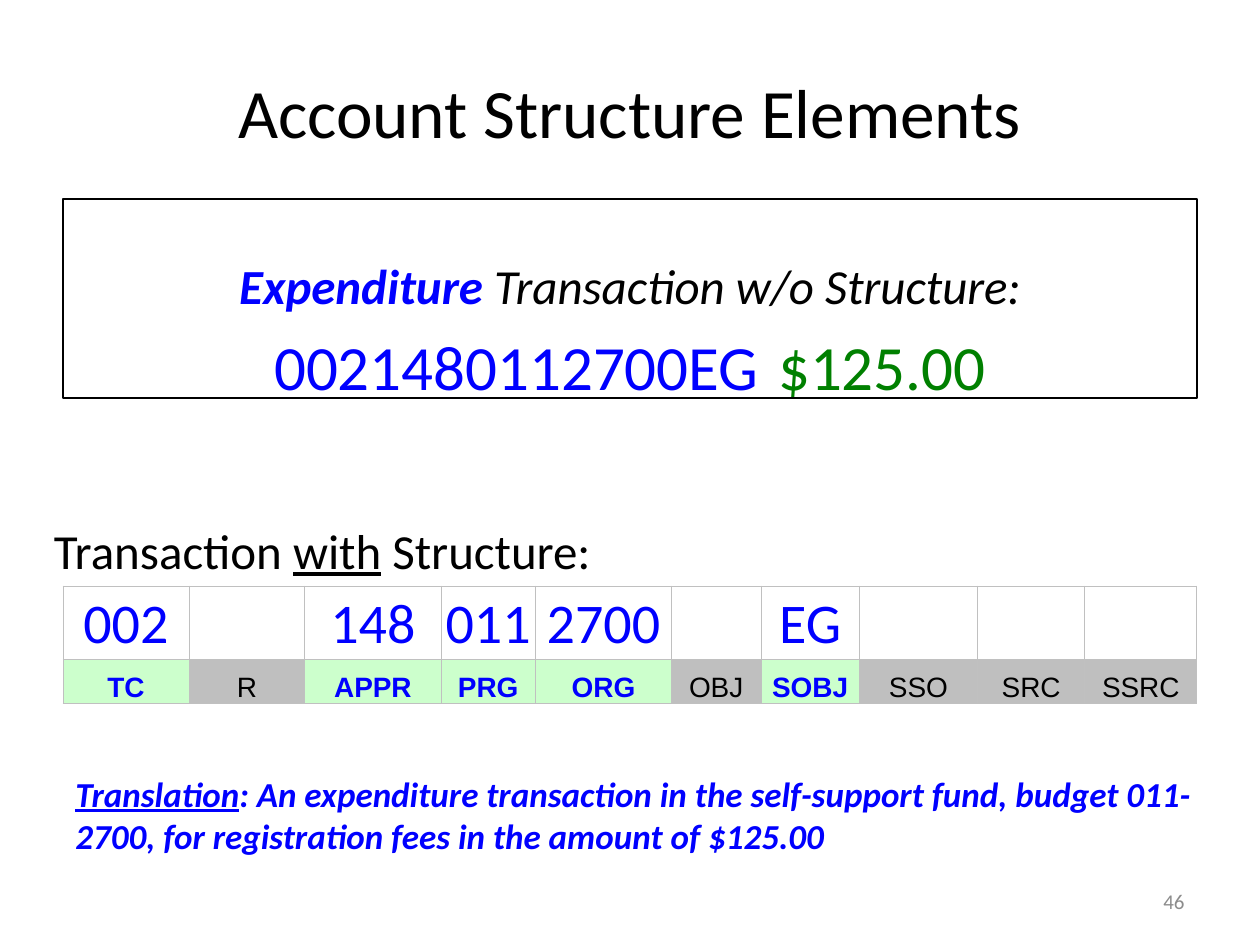
from dataclasses import dataclass

from lxml import etree
from pptx import Presentation
from pptx.dml.color import RGBColor
from pptx.enum.shapes import MSO_SHAPE
from pptx.enum.text import MSO_ANCHOR, PP_ALIGN
from pptx.oxml.ns import qn
from pptx.util import Inches, Pt

RECTANGLE = MSO_SHAPE.RECTANGLE
TOP, MIDDLE, BOTTOM = MSO_ANCHOR.TOP, MSO_ANCHOR.MIDDLE, MSO_ANCHOR.BOTTOM
LEFT, CENTER, RIGHT = PP_ALIGN.LEFT, PP_ALIGN.CENTER, PP_ALIGN.RIGHT


@dataclass(frozen=True)
class Theme:
    font: str = "Calibri"
    label_font: str = "Arial"
    black: str = "000000"
    blue: str = "0000FF"
    green: str = "008000"
    used: str = "CCFFCC"
    unused: str = "BFBFBF"
    border: str = "C0C0C0"
    muted: str = "8C8C8C"
    title: float = 39.6
    account: int = 36
    code: int = 32
    heading: int = 28
    note: int = 20
    label: int = 16
    number: int = 12


THEME = Theme()

ELEMENTS = [
    ("TC", "002", 1),
    ("R", "", 0.92),
    ("APPR", "148", 1.08),
    ("PRG", "011", 0.75),
    ("ORG", "2700", 1.08),
    ("OBJ", "", 0.71),
    ("SOBJ", "EG", 0.78),
    ("SSO", "", 0.94),
    ("SRC", "", 0.85),
    ("SSRC", "", 0.89),
]
ROW_HEIGHTS = (0.58, 0.35)


def add_text(paragraph, text, size, color=THEME.black, font=THEME.font,
             bold=False, italic=False, underline=False):
    run = paragraph.add_run()
    run.text = text
    run.font.size = Pt(size)
    run.font.name = font
    run.font.color.rgb = RGBColor.from_string(color)
    run.font.bold = bold
    run.font.italic = italic
    run.font.underline = underline


def add_text_box(slide, box, align=LEFT, anchor=TOP):
    shape = slide.shapes.add_textbox(*map(Inches, box))
    shape.text_frame.word_wrap = True
    shape.text_frame.vertical_anchor = anchor
    paragraph = shape.text_frame.paragraphs[0]
    paragraph.alignment = align
    return paragraph


def add_title(slide, box):
    paragraph = add_text_box(slide, box, CENTER, MIDDLE)
    add_text(paragraph, "Account Structure Elements", THEME.title)


def add_unstructured_panel(slide, box):
    shape = slide.shapes.add_shape(RECTANGLE, *map(Inches, box))
    shape.shadow.inherit = False
    shape.fill.background()
    shape.line.color.rgb = RGBColor.from_string(THEME.black)
    shape.line.width = Pt(1)
    frame = shape.text_frame
    frame.word_wrap = True
    frame.vertical_anchor = TOP
    frame.margin_top = Inches(0.45)

    heading = frame.paragraphs[0]
    heading.alignment = CENTER
    add_text(heading, "Expenditure", THEME.heading, THEME.blue, bold=True, italic=True)
    add_text(heading, " Transaction w/o Structure:", THEME.heading, italic=True)

    account = frame.add_paragraph()
    account.alignment = CENTER
    account.space_before = Pt(THEME.account * 0.2)
    add_text(account, "0021480112700EG\t", THEME.account, THEME.blue)
    add_text(account, "$125.00", THEME.account, THEME.green)


def add_structured_heading(slide, box):
    paragraph = add_text_box(slide, box)
    add_text(paragraph, "Transaction ", THEME.heading)
    add_text(paragraph, "with", THEME.heading, underline=True)
    add_text(paragraph, " Structure:", THEME.heading)


def set_borders(cell):
    properties = cell._tc.get_or_add_tcPr()
    for side in ("a:lnL", "a:lnR", "a:lnT", "a:lnB"):
        line = etree.SubElement(properties, qn(side), w=str(Pt(0.5)))
        fill = etree.SubElement(line, qn("a:solidFill"))
        etree.SubElement(fill, qn("a:srgbClr"), val=THEME.border)


def fill_cell(cell, text, fill=None, **text_format):
    set_borders(cell)
    if fill:
        cell.fill.solid()
        cell.fill.fore_color.rgb = RGBColor.from_string(fill)
    else:
        cell.fill.background()
    cell.vertical_anchor = BOTTOM
    cell.margin_left = cell.margin_right = cell.margin_top = Inches(0.01)
    cell.margin_bottom = 0
    if text:
        paragraph = cell.text_frame.paragraphs[0]
        paragraph.alignment = CENTER
        add_text(paragraph, text, **text_format)


def add_element_table(slide, box):
    frame = slide.shapes.add_table(len(ROW_HEIGHTS), len(ELEMENTS), *map(Inches, box))
    table = frame.table
    table.first_row = False
    table.horz_banding = False
    for row, height in zip(table.rows, ROW_HEIGHTS):
        row.height = Inches(height)
    for column, (label, code, width) in enumerate(ELEMENTS):
        table.columns[column].width = Inches(width)
        fill_cell(table.cell(0, column), code, size=THEME.code, color=THEME.blue)
        fill_cell(table.cell(1, column), label,
                  fill=THEME.used if code else THEME.unused,
                  size=THEME.label, font=THEME.label_font, bold=bool(code),
                  color=THEME.blue if code else THEME.black)


def add_translation(slide, box):
    paragraph = add_text_box(slide, box)
    style = dict(size=THEME.note, color=THEME.blue, bold=True, italic=True)
    add_text(paragraph, "Translation", underline=True, **style)
    add_text(paragraph, ": An expenditure transaction in the self-support fund, "
             "budget 011-2700, for registration fees in the amount of $125.00", **style)


def add_slide_number(slide, box):
    paragraph = add_text_box(slide, box, RIGHT, MIDDLE)
    add_text(paragraph, "46", THEME.number, THEME.muted)


def main():
    presentation = Presentation()
    presentation.slide_width = Inches(10)
    presentation.slide_height = Inches(7.5)
    slide = presentation.slides.add_slide(presentation.slide_layouts[6])
    add_title(slide, (0.5, 0.5, 9, 0.75))
    add_unstructured_panel(slide, (0.5, 1.58, 9, 1.58))
    add_element_table(slide, (0.5, 4.65, 9, sum(ROW_HEIGHTS)))
    add_structured_heading(slide, (0.33, 4.08, 5.33, 0.57))
    add_slide_number(slide, (7.17, 6.95, 2.33, 0.4))
    add_translation(slide, (0.5, 6.08, 9.08, 0.77))
    presentation.save("out.pptx")


if __name__ == "__main__":
    main()
